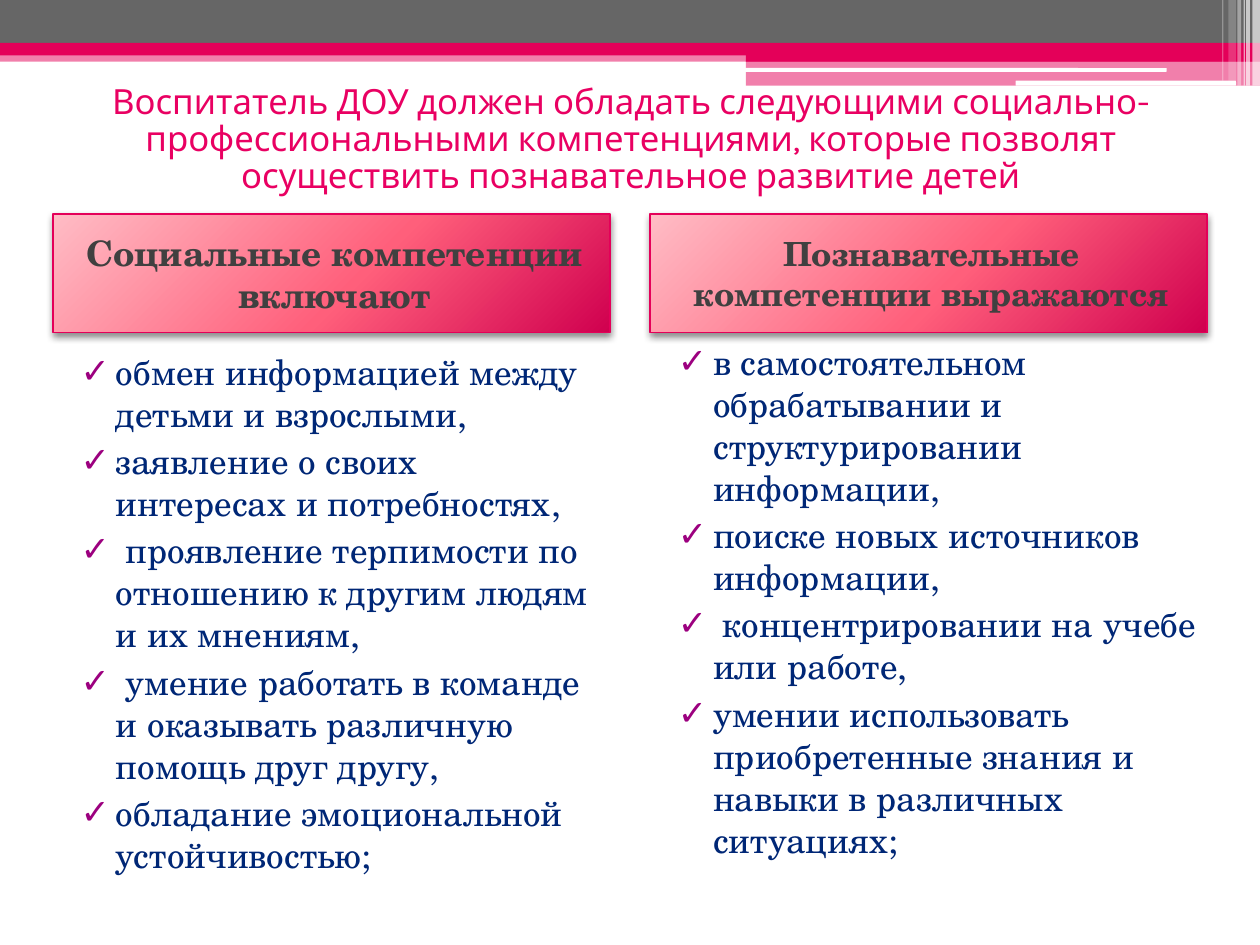
from copy import deepcopy

from lxml import etree
from pptx import Presentation
from pptx.dml.color import RGBColor
from pptx.enum import shapes, text
from pptx.oxml import ns, parse_xml
from pptx.util import Inches, Pt

COLORS = {
    "pink": "E40059", "title": "E90062", "gray": "666666", "white": "FFFFFF",
    "head": "404040", "body": "002776", "check": "9C007F",
    "light": "FFBCC5", "mid": "FF5F7B", "deep": "D0004F",
}
SERIF = "TeX Gyre Schola"


def rgb(name):
    return RGBColor.from_string(COLORS[name])


def style(par, font, size, color, bold=False):
    """Format every run of a paragraph."""
    for run in par.runs:
        run.font.name = font
        run.font.size = Pt(size)
        run.font.bold = bold
        run.font.color.rgb = rgb(color)


prs = Presentation()
prs.slide_width, prs.slide_height = Inches(10), Inches(7.5)
slide = prs.slides.add_slide(prs.slide_layouts[4])

# Top band: left, top, width, height, colour, opacity in percent
bars = [
    (0, 0.4, 10, 0.09, "pink", 50),
    (0, 0, 10, 0.34, "gray", 100),
    (0, 0.34, 10, 0.1, "pink", 100),
    (5.92, 0.39, 4.08, 0.1, "pink", 100),
    (5.92, 0.48, 4.08, 0.2, "pink", 50),
    (5.91, 0.54, 3.35, 0.03, "white", 100),
    (8.06, 0.64, 1.75, 0.04, "white", 100),
    (9.94, 0, 0.06, 0.68, "white", 65),
    (9.89, 0, 0.03, 0.68, "white", 65),
    (9.87, 0, 0.01, 0.68, "white", 60),
    (9.82, 0, 0.03, 0.68, "white", 40),
    (9.75, 0, 0.06, 0.64, "white", 20),
    (9.7, 0, 0.01, 0.64, "white", 30),
]
for left, top, width, height, color, alpha in bars:
    round_bar = height < 0.05 and width > 1
    kind = shapes.MSO_SHAPE.ROUNDED_RECTANGLE if round_bar else shapes.MSO_SHAPE.RECTANGLE
    bar = slide.shapes.add_shape(
        kind, Inches(left), Inches(top), Inches(width), Inches(height))
    bar.shadow.inherit = False
    bar.line.fill.background()
    bar.fill.solid()
    bar.fill.fore_color.rgb = rgb(color)
    if alpha < 100:
        tint = bar._element.spPr.find(".//" + ns.qn("a:srgbClr"))
        etree.SubElement(tint, ns.qn("a:alpha"), val=str(alpha * 1000))

# Title
title = slide.shapes.title
title.left, title.top = Inches(0.42), Inches(0.72)
title.width, title.height = Inches(9.17), Inches(0.79)
frame = title.text_frame
frame.text = ("Воспитатель ДОУ должен обладать следующими социально-профессиональными "
              "компетенциями, которые позволят осуществить познавательное развитие детей")
frame.auto_size = text.MSO_AUTO_SIZE.NONE
frame.vertical_anchor = text.MSO_ANCHOR.MIDDLE
frame.paragraphs[0].alignment = text.PP_ALIGN.CENTER
frame.paragraphs[0].line_spacing = 0.88
style(frame.paragraphs[0], "Karla", 19.8, "title")

# Columns: placeholder ids, left, heading, heading size, list top, list width, items
columns = [
    (1, 2, 0.42, "Социальные компетенции включают", 20, 2.73, 4.42, [
        "обмен информацией между детьми и взрослыми,",
        "заявление о своих интересах и потребностях,",
        " проявление терпимости по отношению к другим людям и их мнениям,",
        " умение работать в команде и оказывать различную помощь друг другу,",
        "обладание эмоциональной устойчивостью;",
    ]),
    (3, 4, 5.16, "Познавательные компетенции выражаются", 19, 2.65, 4.72, [
        "в самостоятельном обрабатывании и структурировании информации,",
        "поиске новых источников информации,",
        " концентрировании на учебе или работе,",
        "умении использовать приобретенные знания и навыки в различных ситуациях;",
    ]),
]
SHADOW = (f'<a:effectLst {ns.nsdecls("a")}><a:outerShdw blurRad="50800" dist="25400" '
          'dir="5400000" rotWithShape="0"><a:srgbClr val="000000">'
          '<a:alpha val="45000"/></a:srgbClr></a:outerShdw></a:effectLst>')
holders = {p.placeholder_format.idx: p for p in slide.placeholders}

for head_id, list_id, left, label, size, top, width, items in columns:
    head = holders[head_id]
    head.left, head.top = Inches(left), Inches(1.7)
    head.width, head.height = Inches(4.42), Inches(0.94)
    head.fill.gradient()
    head.fill.gradient_angle = 315
    stops = head._element.spPr.find(".//" + ns.qn("a:gsLst"))
    stops.append(deepcopy(stops[-1]))
    for stop, color, place in zip(
            head.fill.gradient_stops, ("light", "mid", "deep"), (0, 0.55, 1)):
        stop.color.rgb = rgb(color)
        stop.position = place
    head.line.color.rgb = rgb("pink")
    head.line.width = Pt(1)
    head._element.spPr.append(parse_xml(SHADOW))
    frame = head.text_frame
    frame.text = label
    frame.auto_size = text.MSO_AUTO_SIZE.NONE
    frame.vertical_anchor = text.MSO_ANCHOR.MIDDLE
    par = frame.paragraphs[0]
    par.alignment = text.PP_ALIGN.CENTER
    par.space_before = Pt(3)
    par._p.get_or_add_pPr().set("marL", str(Inches(0.05)))
    style(par, SERIF, size, "head", True)

    body = holders[list_id]
    body.left, body.top = Inches(left), Inches(top)
    body.width, body.height = Inches(width), Inches(4.49)
    frame = body.text_frame
    frame.text = "\n".join(items)
    frame.auto_size = text.MSO_AUTO_SIZE.NONE
    for par in frame.paragraphs:
        par.space_before = Pt(3)
        props = par._p.get_or_add_pPr()
        props.set("marL", str(Inches(0.4)))
        props.set("indent", str(Inches(-0.28)))
        tint = etree.SubElement(props, ns.qn("a:buClr"))
        etree.SubElement(tint, ns.qn("a:srgbClr"), val=COLORS["check"])
        etree.SubElement(props, ns.qn("a:buChar"), char="✓")
        style(par, SERIF, 20, "body")

for spare in list(slide.placeholders):
    if not spare.text_frame.text:
        spare._element.getparent().remove(spare._element)

prs.save("out.pptx")
